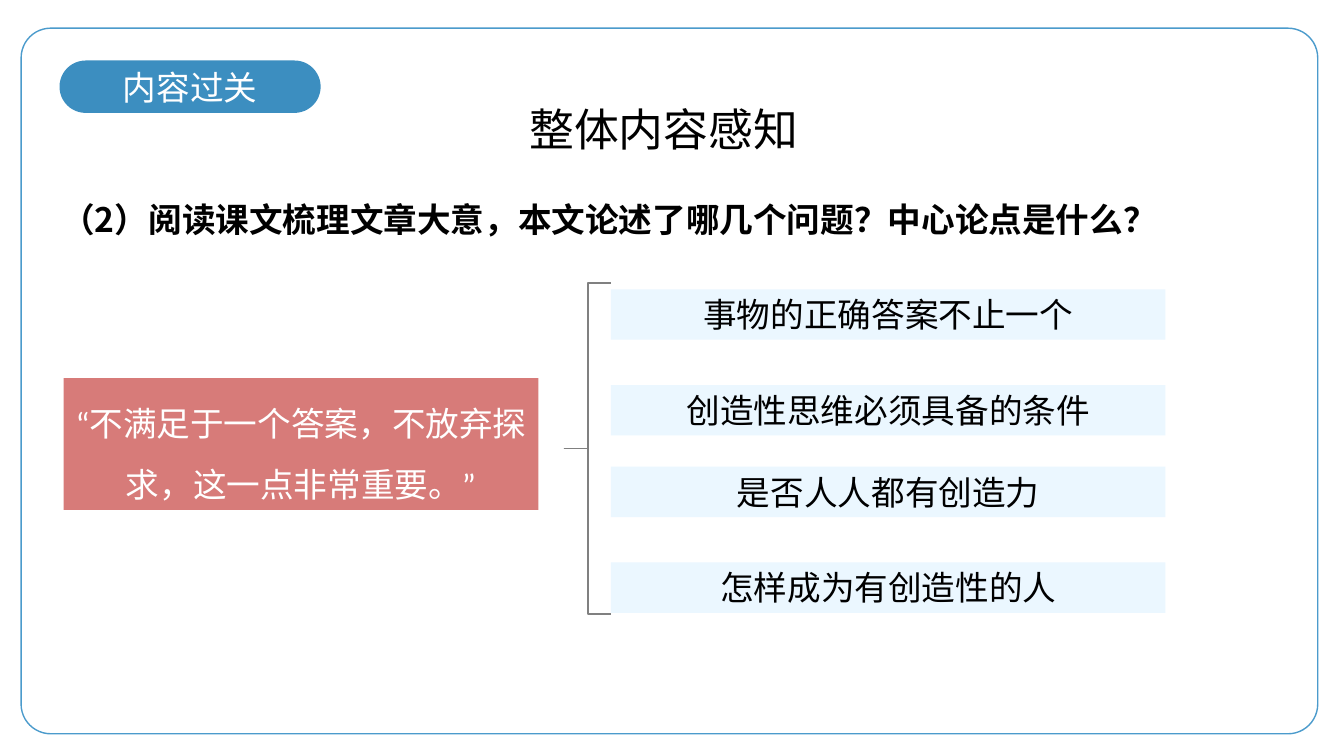
from pptx import Presentation
from pptx.dml.color import RGBColor
from pptx.enum.shapes import MSO_SHAPE as SHAPE
from pptx.enum.text import MSO_ANCHOR as ANCHOR, MSO_AUTO_SIZE as AUTO_SIZE, PP_ALIGN as ALIGN
from pptx.oxml.ns import qn
from pptx.util import Inches, Pt

BLUE = RGBColor(0x3C, 0x8E, 0xC0)
FRAME_BLUE = RGBColor(0x4B, 0x9B, 0xCC)
PALE_BLUE = RGBColor(0xEB, 0xF7, 0xFF)
RED = RGBColor(0xD7, 0x7B, 0x79)
GRAY = RGBColor(0x80, 0x80, 0x80)
BLACK = RGBColor(0, 0, 0)
WHITE = RGBColor(0xFF, 0xFF, 0xFF)
LATIN_FONT = "Calibri"
CHINESE_FONT = "Noto Sans CJK SC"

ISSUES = [
    (0.06, "事物的正确答案不止一个"),
    (1.01, "创造性思维必须具备的条件"),
    (1.82, "是否人人都有创造力"),
    (2.77, "怎样成为有创造性的人"),
]


def add_block(slide, kind, left, top, width, height, fill=None, line=None, line_width=1):
    block = slide.shapes.add_shape(
        kind, Inches(left), Inches(top), Inches(width), Inches(height))
    block.shadow.inherit = False
    if fill is None:
        block.fill.background()
    else:
        block.fill.solid()
        block.fill.fore_color.rgb = fill
    if line is None:
        block.line.fill.background()
    else:
        block.line.color.rgb = line
        block.line.width = Pt(line_width)
    return block


def write(block, text, size=24, color=BLACK, font=CHINESE_FONT, bold=False,
          align=ALIGN.CENTER, anchor=ANCHOR.TOP, spacing=None):
    frame = block.text_frame
    frame.word_wrap = True
    frame.vertical_anchor = anchor
    frame.auto_size = AUTO_SIZE.SHAPE_TO_FIT_TEXT if anchor == ANCHOR.TOP else AUTO_SIZE.NONE
    frame.text = text
    paragraph = frame.paragraphs[0]
    paragraph.alignment = align
    if spacing:
        paragraph.line_spacing = spacing
    run = paragraph.runs[0]
    run.font.size = Pt(size)
    run.font.bold = bold
    run.font.color.rgb = color
    run.font.name = font
    # East Asian typeface, which sets the line height
    east_asian = run.font._element.makeelement(qn("a:ea"), {"typeface": LATIN_FONT})
    run.font._element.find(qn("a:latin")).addnext(east_asian)


def add_header(slide, left, top):
    # Section label
    label = add_block(slide, SHAPE.ROUNDED_RECTANGLE, left, top, 2.59, 0.52, fill=BLUE)
    label.adjustments[0] = 0.5
    write(label, "内容过关", color=WHITE, font=LATIN_FONT, anchor=ANCHOR.MIDDLE)
    # Page frame
    frame = add_block(slide, SHAPE.ROUNDED_RECTANGLE, left - 0.38, top - 0.32, 12.86, 7,
                      line=FRAME_BLUE)
    frame.adjustments[0] = 0.042
    # Title
    title = add_block(slide, SHAPE.ROUNDED_RECTANGLE, left + 3.94, top + 0.41, 4.11, 0.54)
    title.adjustments[0] = 0.5
    write(title, "整体内容感知", size=32, anchor=ANCHOR.MIDDLE)


def add_question(slide, left, top, width, height):
    question = slide.shapes.add_textbox(
        Inches(left), Inches(top), Inches(width), Inches(height))
    write(question, "（2）阅读课文梳理文章大意，本文论述了哪几个问题？中心论点是什么？",
          bold=True, align=ALIGN.JUSTIFY, spacing=1.2)


def add_argument_tree(slide, left, top, height):
    # Central argument
    argument = add_block(slide, SHAPE.RECTANGLE, left, top + 0.94, 4.71, 1.31, fill=RED)
    write(argument, "“不满足于一个答案，不放弃探求，这一点非常重要。”", color=WHITE, spacing=1.5)
    # Brace
    brace = add_block(slide, SHAPE.LEFT_BRACE, left + 4.97, top, 0.46, height,
                      line=GRAY, line_width=1.25)
    brace.adjustments[0] = 0
    # Issues discussed
    for offset, text in ISSUES:
        issue = add_block(slide, SHAPE.RECTANGLE, left + 5.43, top + offset, 5.5, 0.5,
                          fill=PALE_BLUE)
        write(issue, text)


def main():
    presentation = Presentation()
    presentation.slide_width = Inches(13.33)
    presentation.slide_height = Inches(7.5)
    slide = presentation.slides.add_slide(presentation.slide_layouts[6])
    add_header(slide, 0.59, 0.6)
    add_question(slide, 0.51, 1.84, 12.28, 0.58)
    add_argument_tree(slide, 0.63, 2.81, 3.28)
    presentation.save("out.pptx")


if __name__ == "__main__":
    main()
